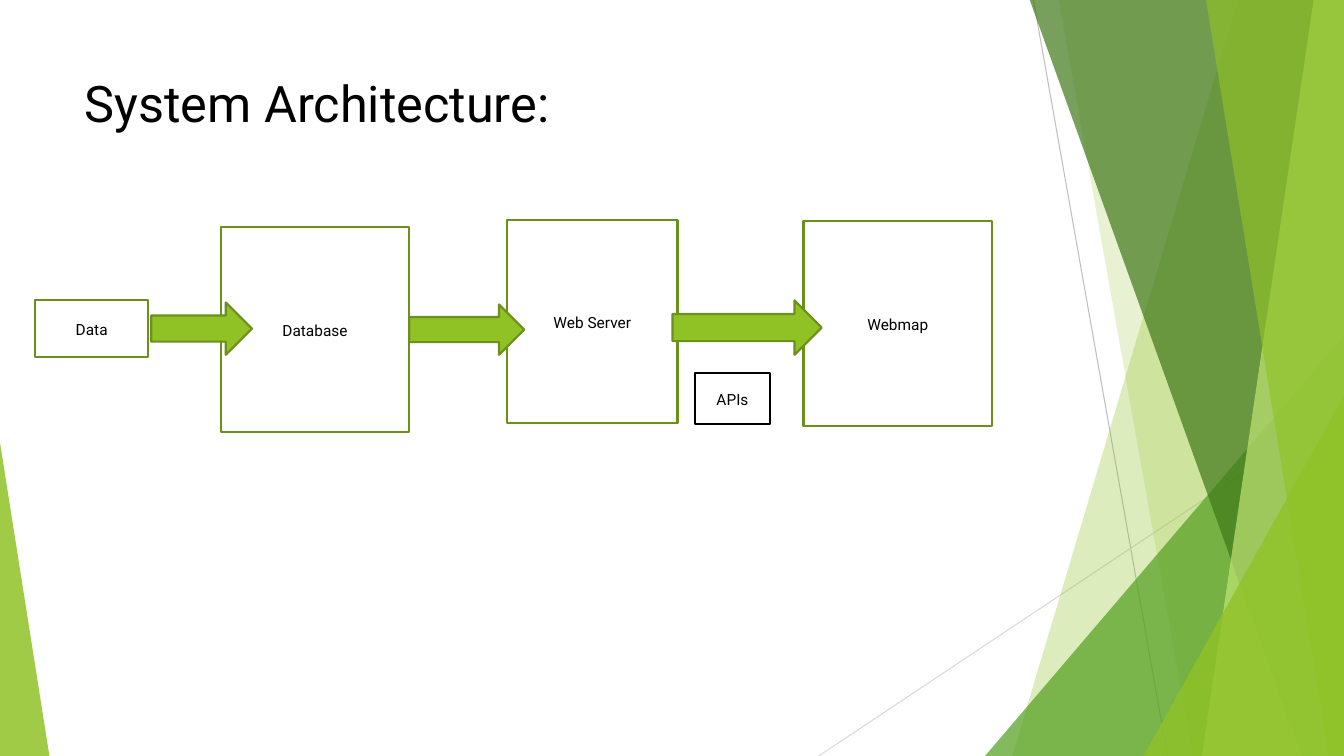
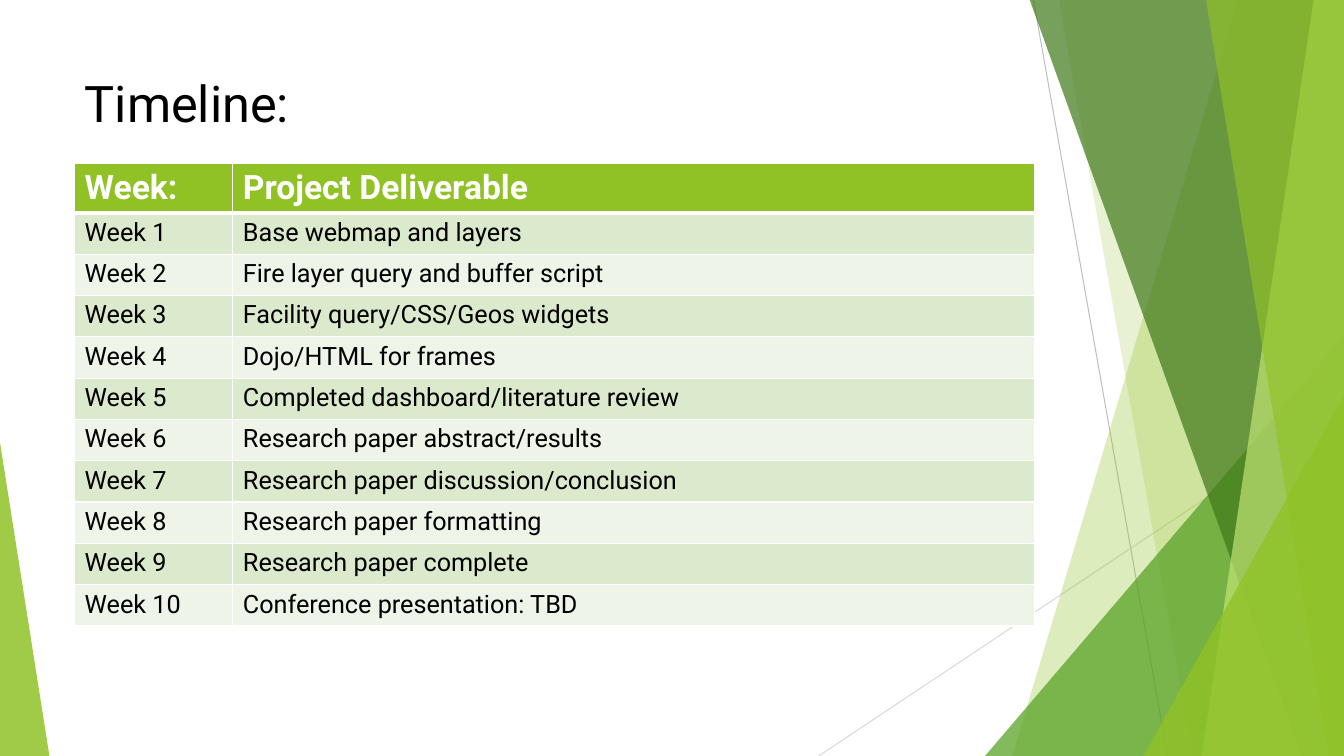
"""Build a two-slide project deck: a system architecture flow and a weekly timeline."""
from lxml.etree import SubElement
from pptx import Presentation
from pptx.dml.color import RGBColor
from pptx.enum.shapes import MSO_CONNECTOR, MSO_SHAPE
from pptx.enum.text import MSO_ANCHOR, MSO_AUTO_SIZE, PP_ALIGN
from pptx.oxml.ns import qn
from pptx.util import Inches, Pt

WIDTH, HEIGHT = 13.33, 7.5
FONT = "Roboto"
GREEN, DARK_GREEN, BLACK, WHITE = "90C226", "6B901C", "000000", "FFFFFF"
BANDS = ("DBE9CD", "EEF4E8")
MARGIN, TITLE_TOP = 0.74, 0.67

RAYS = [
    ((10.25, 0), (11.58, HEIGHT), "BFBFBF"),
    ((WIDTH, 4.03), (8.12, HEIGHT), "D9D9D9"),
]
FACETS = [
    ("blade", 12.28, 10.04, GREEN, 30),
    ("blade", 10.5, 11.83, GREEN, 20),
    ("right corner", 9.77, 3.33, "54A021", 72),
    ("blade", 10.21, 12.91, "3F7819", 70),
    ("blade", 13.03, 11.92, "C0E474", 70),
    ("blade", 11.96, 13.18, GREEN, 65),
    ("right corner", 11.34, 3.93, GREEN, 80),
    ("left corner", 0.49, 4.39, GREEN, 85),
]

BOXES = [
    ("Database", 2.19, 2.25, 1.87, 2.04, DARK_GREEN),
    ("Web Server", 5.03, 2.18, 1.69, 2.02, DARK_GREEN),
    ("Data", 0.35, 2.98, 1.12, 0.56, DARK_GREEN),
    ("Webmap", 7.97, 2.19, 1.87, 2.04, DARK_GREEN),
    ("APIs", 6.89, 3.7, 0.75, 0.51, BLACK),
]
ARROWS = [
    (6.67, 2.98, 1.48, 0.54),
    (4.06, 3.02, 1.14, 0.5),
    (1.5, 3, 1, 0.52),
]

TABLE_HEADER = ("Week:", "Project Deliverable")
DELIVERABLES = [
    "Base webmap and layers",
    "Fire layer query and buffer script",
    "Facility query/CSS/Geos widgets",
    "Dojo/HTML for frames",
    "Completed dashboard/literature review",
    "Research paper abstract/results",
    "Research paper discussion/conclusion",
    "Research paper formatting",
    "Research paper complete",
    "Conference presentation: TBD",
]
TABLE_TOP, COLUMN_WIDTHS, ROW_HEIGHT = 1.62, (1.57, 7.95), 0.41


def color(value):
    return RGBColor.from_string(value)


def inches(*lengths):
    return [Inches(length) for length in lengths]


def format_text(paragraph, size, text_color, bold=False):
    for run in paragraph.runs:
        run.font.name = FONT
        run.font.size = Pt(size)
        run.font.bold = bold
        run.font.color.rgb = color(text_color)


def paint(shape, fill, line=None, opacity=100):
    shape.shadow.inherit = False
    shape.fill.solid()
    shape.fill.fore_color.rgb = color(fill)
    if opacity < 100:
        fill_color = shape.element.spPr.find(".//" + qn("a:srgbClr"))
        SubElement(fill_color, qn("a:alpha"), val=str(opacity * 1000))
    if line:
        shape.line.color.rgb = color(line)
        shape.line.width = Pt(1.5)
    else:
        shape.line.fill.background()


def add_ray(shapes, start, end, line):
    ray = shapes.add_connector(MSO_CONNECTOR.STRAIGHT, *inches(*start, *end))
    ray.line.color.rgb = color(line)
    ray.line.width = Pt(0.75)
    SubElement(ray.element.spPr, qn("a:effectLst"))


def add_blade(shapes, top_x, bottom_x):
    top = -0.01
    builder = shapes.build_freeform(*inches(top_x, top))
    corners = [(WIDTH, top), (WIDTH, HEIGHT), (bottom_x, HEIGHT)]
    builder.add_line_segments([inches(*corner) for corner in corners])
    return builder.convert_to_shape()


def add_corner(shapes, left, right, top, peak):
    box = inches(left, top, right - left, HEIGHT - top)
    corner = shapes.add_shape(MSO_SHAPE.ISOSCELES_TRIANGLE, *box)
    corner.adjustments[0] = peak
    return corner


def decorate_layout(layout, slide):
    group = slide.shapes.add_group_shape()
    for ray in RAYS:
        add_ray(group.shapes, *ray)
    for kind, first, second, fill, opacity in FACETS:
        if kind == "blade":
            facet = add_blade(group.shapes, first, second)
        elif kind == "right corner":
            facet = add_corner(group.shapes, first, WIDTH, second, 1)
        else:
            facet = add_corner(group.shapes, 0, first, second, 0)
        paint(facet, fill, opacity=opacity)
    for number, properties in enumerate(group.element.iter(qn("p:cNvPr")), 100):
        properties.set("id", str(number))
    layout.shapes.element.insert(2, group.element)


def add_titled_slide(presentation, layout, text, width, height):
    slide = presentation.slides.add_slide(layout)
    title = slide.shapes.title
    title.left, title.top, title.width, title.height = inches(MARGIN, TITLE_TOP, width, height)
    frame = title.text_frame
    frame.text = text
    frame.word_wrap = True
    frame.auto_size = MSO_AUTO_SIZE.NONE
    frame.vertical_anchor = MSO_ANCHOR.TOP
    frame.paragraphs[0].alignment = PP_ALIGN.LEFT
    format_text(frame.paragraphs[0], 36, BLACK)
    return slide


def add_box(slide, label, left, top, width, height, line):
    box = slide.shapes.add_shape(MSO_SHAPE.RECTANGLE, *inches(left, top, width, height))
    paint(box, WHITE, line)
    frame = box.text_frame
    frame.text = label
    frame.word_wrap = True
    frame.vertical_anchor = MSO_ANCHOR.MIDDLE
    paragraph = frame.paragraphs[0]
    paragraph.alignment = PP_ALIGN.CENTER
    paragraph.line_spacing = 1.07
    paragraph.space_after = Pt(8)
    format_text(paragraph, 11, BLACK)


def set_borders(cell, **widths):
    properties = cell._tc.get_or_add_tcPr()
    for side in "LRTB":
        width = Pt(widths.get(side, 1))
        border = SubElement(properties, qn("a:ln" + side), w=str(width))
        fill = SubElement(border, qn("a:solidFill"))
        SubElement(fill, qn("a:srgbClr"), val=WHITE)


def add_timeline(slide):
    rows = [TABLE_HEADER]
    rows += [(f"Week {week}", task) for week, task in enumerate(DELIVERABLES, 1)]
    box = inches(MARGIN, TABLE_TOP, sum(COLUMN_WIDTHS), ROW_HEIGHT * len(rows))
    table = slide.shapes.add_table(len(rows), len(COLUMN_WIDTHS), *box).table
    for column, width in zip(table.columns, COLUMN_WIDTHS):
        column.width = Inches(width)
    for row_index, texts in enumerate(rows):
        table.rows[row_index].height = Inches(ROW_HEIGHT)
        is_header = row_index == 0
        for column_index, text in enumerate(texts):
            cell = table.cell(row_index, column_index)
            cell.text_frame.text = text
            set_borders(cell, B=3 if is_header else 1, T=3 if row_index == 1 else 1)
            cell.fill.solid()
            fill = GREEN if is_header else BANDS[(row_index - 1) % 2]
            cell.fill.fore_color.rgb = color(fill)
            style = (24, WHITE, True) if is_header else (18, BLACK)
            format_text(cell.text_frame.paragraphs[0], *style)


def main():
    presentation = Presentation()
    presentation.slide_width, presentation.slide_height = inches(WIDTH, HEIGHT)
    layout = presentation.slide_layouts[5]

    architecture = add_titled_slide(presentation, layout, "System Architecture:", 11, 0.84)
    decorate_layout(layout, architecture)
    for box in BOXES:
        add_box(architecture, *box)
    for position in ARROWS:
        arrow = architecture.shapes.add_shape(MSO_SHAPE.RIGHT_ARROW, *inches(*position))
        paint(arrow, GREEN, DARK_GREEN)

    timeline = add_titled_slide(presentation, layout, "Timeline:", 9.4, 1.44)
    add_timeline(timeline)
    presentation.save("out.pptx")


main()
